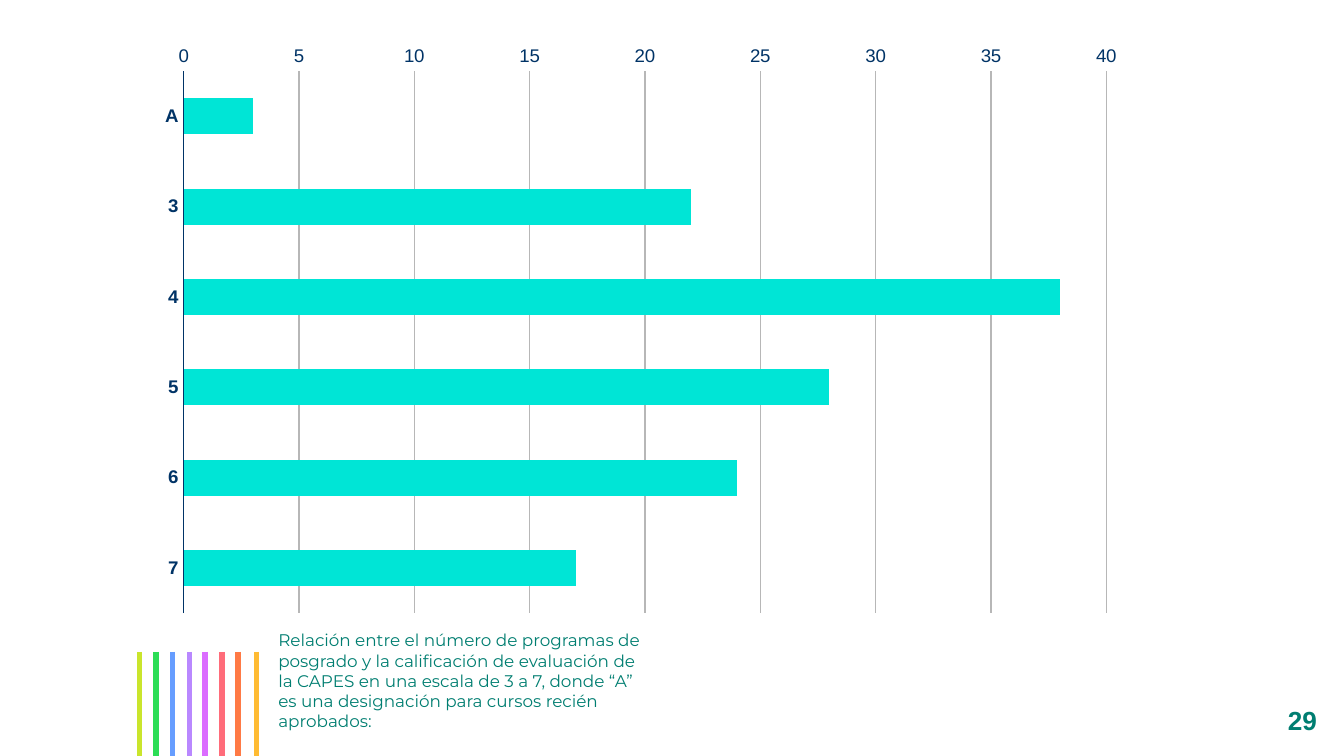
"""Build a slide with a bar chart of graduate programmes by evaluation grade."""
from typing import NamedTuple

from lxml.etree import SubElement
from pptx import Presentation
from pptx.chart.data import CategoryChartData
from pptx.dml.color import RGBColor
from pptx.enum.chart import XL_AXIS_CROSSES as Crosses
from pptx.enum.chart import XL_CHART_TYPE as ChartType
from pptx.enum.chart import XL_TICK_MARK as TickMark
from pptx.enum.shapes import MSO_CONNECTOR as Connector
from pptx.enum.shapes import MSO_SHAPE as Shape
from pptx.enum.text import MSO_ANCHOR as Anchor
from pptx.enum.text import PP_ALIGN as Align
from pptx.oxml import parse_xml
from pptx.oxml.ns import nsdecls, qn
from pptx.util import Cm, Pt

SLIDE_WIDTH, SLIDE_HEIGHT = 25.4, 14.29
STRIPE_TOP = 12.32
WHITE, TEAL, TURQUOISE, NAVY, GREY = "FFFFFF", "007E71", "00E5D6", "003366", "B7B7B7"
CAPTION = (
    "Relación entre el número de programas de posgrado y la calificación de "
    "evaluación de la CAPES en una escala de 3 a 7, donde “A” es una designación "
    "para cursos recién aprobados:"
)


class Stripe(NamedTuple):
    x: float
    color: str


class Grade(NamedTuple):
    label: str
    programmes: int


STRIPES = [
    Stripe(2.64, "CAE52C"),
    Stripe(2.95, "2CDD56"),
    Stripe(3.26, "669DFF"),
    Stripe(3.58, "B988FF"),
    Stripe(3.87, "DB6CFF"),
    Stripe(4.19, "FF6C7A"),
    Stripe(4.5, "FF7A45"),
    Stripe(4.85, "FFBB33"),
]
GRADES = [
    Grade("A", 3),
    Grade("3", 22),
    Grade("4", 38),
    Grade("5", 28),
    Grade("6", 24),
    Grade("7", 17),
]
PLOT_LAYOUT = {"x": 0.04, "y": 0.02, "w": 0.93, "h": 0.92}


def rgb(color: str) -> RGBColor:
    return RGBColor.from_string(color)


def style_font(font, name: str, size: float, color: str, bold: bool = False) -> None:
    font.name, font.size, font.bold = name, Pt(size), bold
    font.color.rgb = rgb(color)


def set_insets(text_frame, left: float, top: float, right: float, bottom: float) -> None:
    text_frame.margin_left, text_frame.margin_top = Cm(left), Cm(top)
    text_frame.margin_right, text_frame.margin_bottom = Cm(right), Cm(bottom)


def draw_stripe(slide, stripe: Stripe) -> None:
    line = slide.shapes.add_connector(
        Connector.STRAIGHT, Cm(stripe.x), Cm(STRIPE_TOP), Cm(stripe.x), Cm(SLIDE_HEIGHT)
    )
    line.line.color.rgb = rgb(stripe.color)
    line.line.width = Pt(3)
    SubElement(line._element.spPr, qn("a:effectLst"))


def draw_page_number(slide, number: str) -> None:
    shape = slide.shapes.add_shape(Shape.RECTANGLE, Cm(23.83), Cm(12.95), Cm(1.57), Cm(1.34))
    shape.shadow.inherit = False
    shape.fill.solid()
    shape.fill.fore_color.rgb = rgb(WHITE)
    shape.line.fill.background()
    text_frame = shape.text_frame
    text_frame.text = number
    text_frame.vertical_anchor = Anchor.MIDDLE
    set_insets(text_frame, 0.25, 0.25, 0.25, 0.25)
    paragraph = text_frame.paragraphs[0]
    paragraph.alignment = Align.CENTER
    style_font(paragraph.runs[0].font, "Arial", 14, TEAL, bold=True)


def draw_caption(slide, text: str) -> None:
    text_box = slide.shapes.add_textbox(Cm(5.26), Cm(11.91), Cm(6.86), Cm(1.68))
    text_frame = text_box.text_frame
    text_frame.word_wrap = True
    set_insets(text_frame, 0, 0, 0, 0.25)
    text_frame.text = text
    style_font(text_frame.paragraphs[0].runs[0].font, "Montserrat", 9, TEAL)


def style_axis(axis, bold: bool) -> None:
    axis.has_title = False
    axis.major_tick_mark = axis.minor_tick_mark = TickMark.NONE
    style_font(axis.tick_labels.font, "Arial", 10, NAVY, bold)


def fix_plot_area(chart, layout: dict[str, float]) -> None:
    plot_area = chart._chartSpace.chart.plotArea
    for automatic in plot_area.findall(qn("c:layout")):
        plot_area.remove(automatic)
    sizes = "".join(f'<c:{side} val="{value}"/>' for side, value in layout.items())
    plot_area.insert(0, parse_xml(
        f'<c:layout {nsdecls("c")}><c:manualLayout><c:layoutTarget val="inner"/>'
        f'<c:xMode val="edge"/><c:yMode val="edge"/>{sizes}</c:manualLayout></c:layout>'
    ))


def draw_chart(slide, grades: list[Grade]) -> None:
    data = CategoryChartData()
    data.categories = [grade.label for grade in grades]
    data.add_series("Series 1", [grade.programmes for grade in grades])
    chart = slide.shapes.add_chart(
        ChartType.BAR_CLUSTERED, Cm(2.72), Cm(0.86), Cm(18.75), Cm(11.4), data
    ).chart
    chart.has_legend = chart.has_title = False
    style_font(chart.font, "Arial", 10, NAVY)
    plot = chart.plots[0]
    plot.gap_width = 150
    plot.vary_by_categories = False
    bars = plot.series[0].format.fill
    bars.solid()
    bars.fore_color.rgb = rgb(TURQUOISE)

    categories, values = chart.category_axis, chart.value_axis
    style_axis(categories, bold=True)
    categories.reverse_order = True
    categories.crosses = Crosses.MAXIMUM
    categories.format.line.color.rgb = rgb(NAVY)
    categories.format.line.width = Pt(0.75)
    style_axis(values, bold=False)
    values.minimum_scale, values.maximum_scale, values.major_unit = 0, 40, 5
    values.format.line.fill.background()
    values.has_major_gridlines = True
    grid_line = values.major_gridlines.format.line
    grid_line.color.rgb = rgb(GREY)
    grid_line.width = Pt(0.75)
    fix_plot_area(chart, PLOT_LAYOUT)


def main() -> None:
    presentation = Presentation()
    presentation.slide_width, presentation.slide_height = Cm(SLIDE_WIDTH), Cm(SLIDE_HEIGHT)
    slide = presentation.slides.add_slide(presentation.slide_layouts[6])
    for stripe in STRIPES:
        draw_stripe(slide, stripe)
    draw_page_number(slide, "29")
    draw_caption(slide, CAPTION)
    draw_chart(slide, GRADES)
    presentation.save("out.pptx")


if __name__ == "__main__":
    main()
